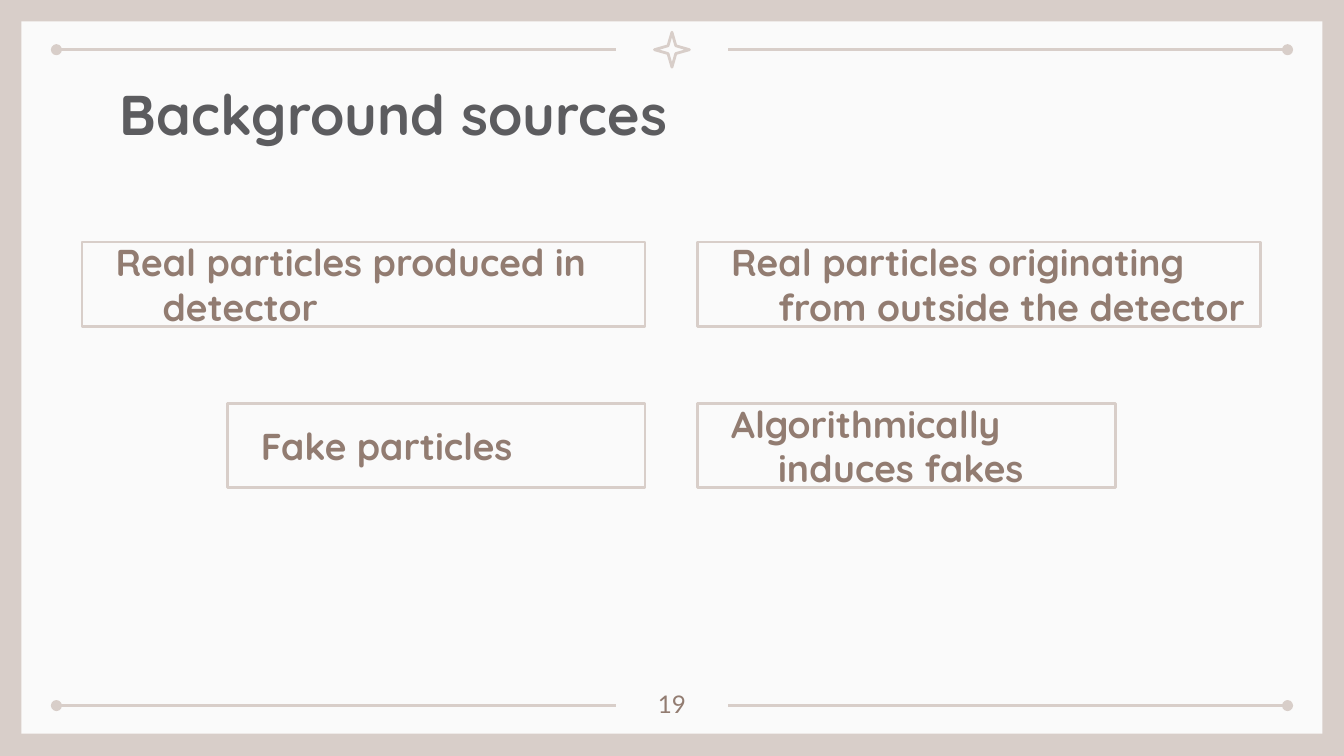
from lxml import etree
from pptx import Presentation
from pptx.dml.color import RGBColor
from pptx.enum.shapes import MSO_CONNECTOR, MSO_SHAPE
from pptx.enum.text import MSO_ANCHOR, MSO_AUTO_SIZE, PP_ALIGN
from pptx.oxml.ns import qn
from pptx.util import Inches, Pt

STRAIGHT = MSO_CONNECTOR.STRAIGHT
RECTANGLE, STAR = MSO_SHAPE.RECTANGLE, MSO_SHAPE.STAR_4_POINT
TOP, MIDDLE = MSO_ANCHOR.TOP, MSO_ANCHOR.MIDDLE
LEFT, CENTER = PP_ALIGN.LEFT, PP_ALIGN.CENTER
NO_AUTOFIT = MSO_AUTO_SIZE.NONE
BEIGE, PAPER, BROWN, GRAY = "D8CEC9", "FAFAFA", "927C71", "5C5C5F"


def color(value):
    return RGBColor.from_string(value)


def write(shape, text, font="Quicksand", size=20, ink=BROWN, bold=True,
          align=LEFT, anchor=TOP):
    frame = shape.text_frame
    frame.word_wrap = True
    frame.auto_size = NO_AUTOFIT
    frame.vertical_anchor = anchor
    frame.margin_left = frame.margin_right = Inches(0.1)
    frame.margin_top = frame.margin_bottom = Inches(0.1)
    paragraph = frame.paragraphs[0]
    paragraph.alignment = align
    paragraph.space_before = Pt(0)
    run = paragraph.add_run()
    run.text = text
    run.font.name, run.font.size, run.font.bold = font, Pt(size), bold
    run.font.color.rgb = color(ink)
    return paragraph


# Widescreen slide, 16 to 9
presentation = Presentation()
presentation.slide_width = Inches(10)
presentation.slide_height = Inches(10) * 9 // 16
# The Comparison layout has a title and four text placeholders
slide = presentation.slides.add_slide(presentation.slide_layouts[4])
title, *sources = list(slide.placeholders)

# Frame: beige background with a pale panel
slide.background.fill.solid()
slide.background.fill.fore_color.rgb = color(BEIGE)
panel = slide.shapes.add_shape(
    RECTANGLE, Inches(0.16), Inches(0.16), Inches(9.68), Inches(5.3))
panel.shadow.inherit = False
panel.fill.solid()
panel.fill.fore_color.rgb = color(PAPER)
panel.line.fill.background()

# Rules with a dot at the outer end, above and below
for y in (0.37, 5.25):
    for outer, inner in ((0.42, 4.58), (9.58, 5.42)):
        rule = slide.shapes.add_connector(
            STRAIGHT, Inches(outer), Inches(y), Inches(inner), Inches(y))
        rule.line.color.rgb = color(BEIGE)
        rule.line.width = Pt(1.5)
        etree.SubElement(rule.line._get_or_add_ln(), qn("a:headEnd"), type="oval")
        etree.SubElement(rule.element.spPr, qn("a:effectLst"))

# Star between the upper rules
star = slide.shapes.add_shape(
    STAR, Inches(4.87), Inches(0.24), Inches(0.26), Inches(0.26))
star.shadow.inherit = False
star.adjustments[0] = 0.157
star.fill.background()
star.line.color.rgb = color(BEIGE)
star.line.width = Pt(1.5)

# Page number
number = slide.shapes.add_textbox(
    Inches(4.7), Inches(5.03), Inches(0.6), Inches(0.36))
write(number, "19", font="Lato", size=13, bold=False, align=CENTER)

# Bring the placeholders in front of the panel
for placeholder in (title, *sources):
    placeholder.element.getparent().append(placeholder.element)

# Title
title.left, title.top = Inches(0.79), Inches(0.49)
title.width, title.height = Inches(8.43), Inches(0.63)
write(title, "Background sources", size=30, ink=GRAY)

# Boxes with the sources: left, top, width, text
boxes = [
    (0.61, 1.8, 4.19, "Real particles produced in detector"),
    (5.19, 1.8, 4.19, "Real particles originating from outside the detector"),
    (1.69, 3, 3.11, "Fake particles"),
    (5.19, 3, 3.11, "Algorithmically induces fakes"),
]
for box, (left, top, width, text) in zip(sources, boxes):
    box.left, box.top = Inches(left), Inches(top)
    box.width, box.height = Inches(width), Inches(0.63)
    box.line.color.rgb = color(BEIGE)
    box.line.width = Pt(1.5)
    paragraph = write(box, text, anchor=MIDDLE)
    properties = paragraph._p.get_or_add_pPr()
    properties.set("marL", str(Inches(0.5)))
    properties.set("indent", str(Inches(-0.35)))
    etree.SubElement(properties, qn("a:buNone"))

presentation.save("out.pptx")
